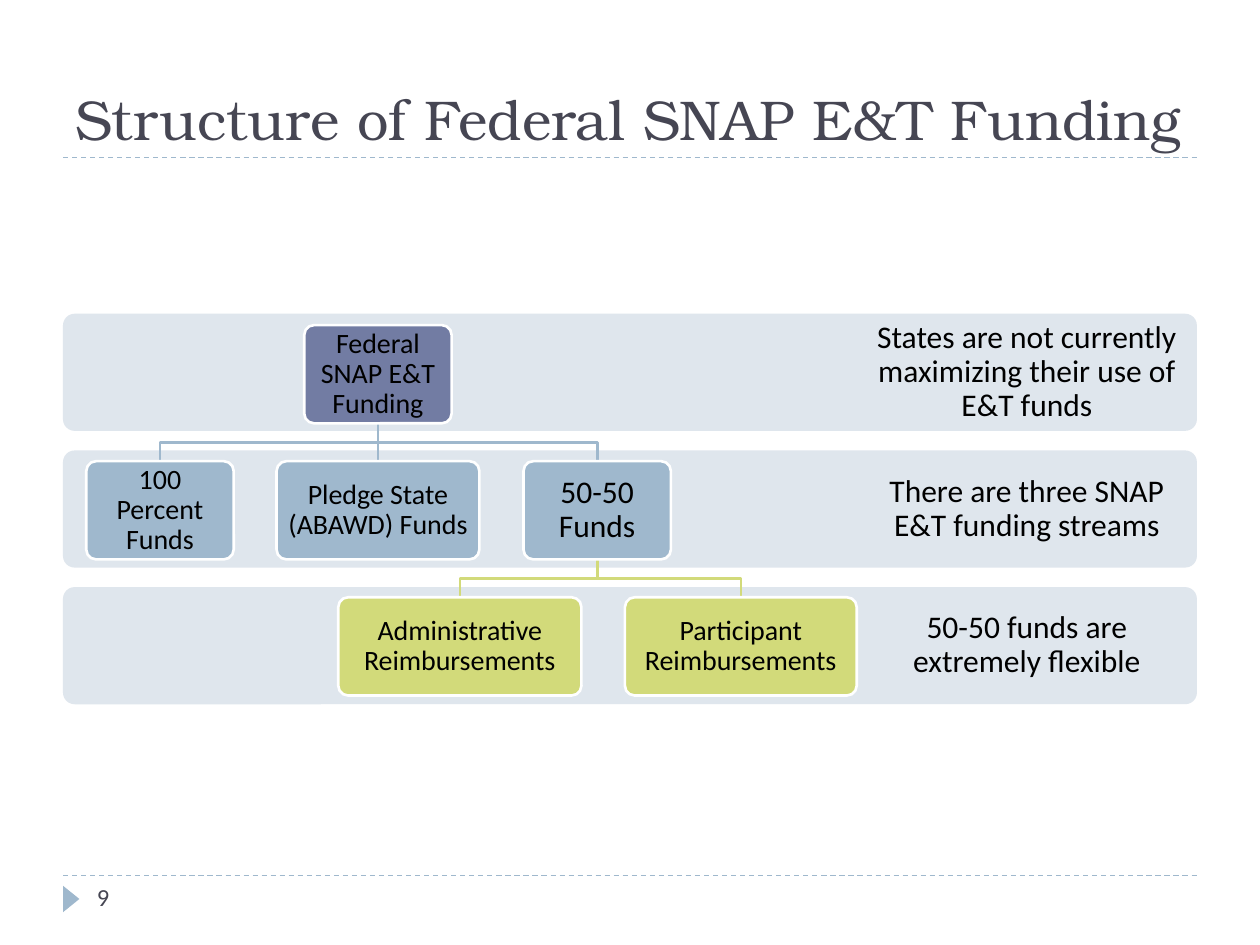
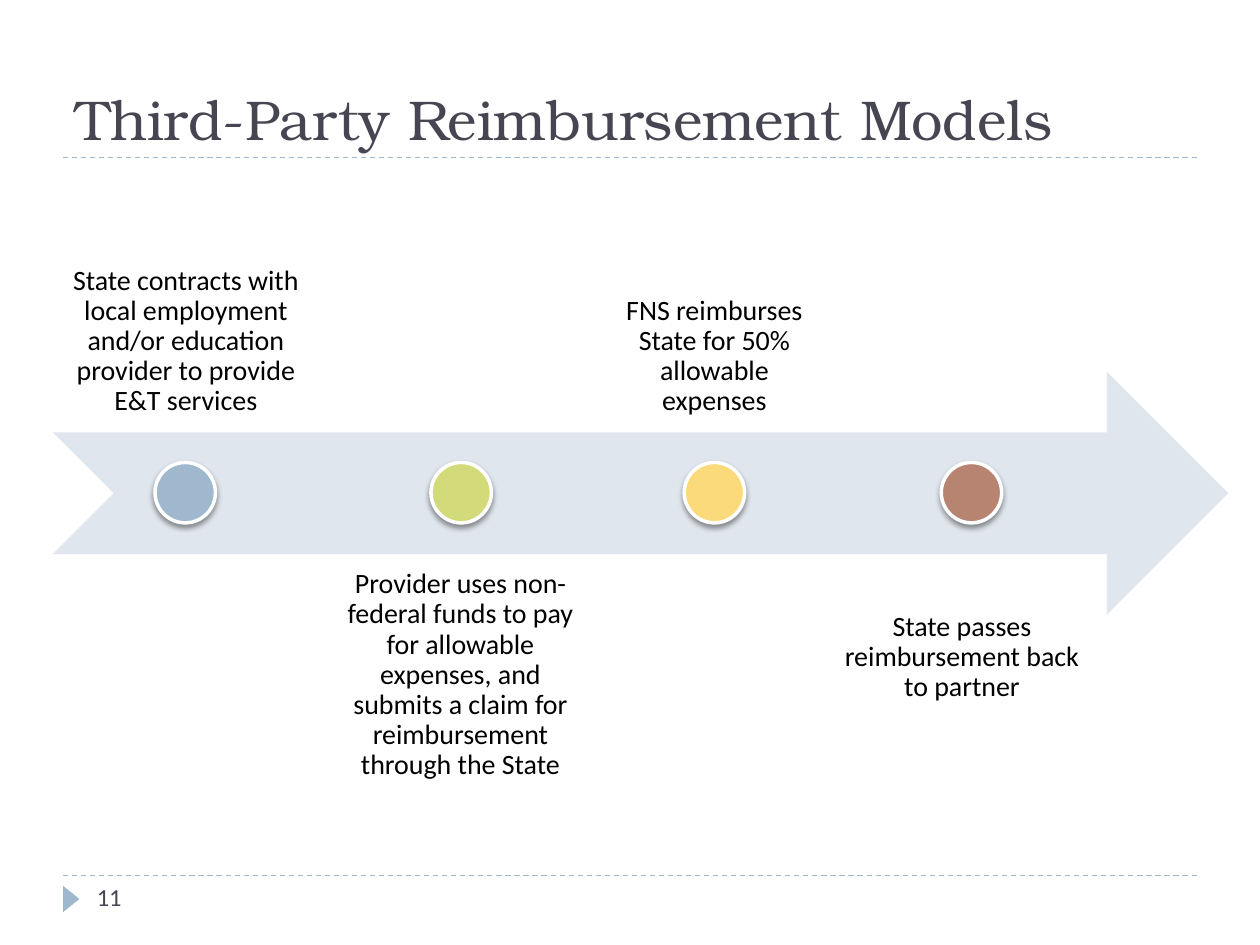
from dataclasses import dataclass

from lxml.etree import SubElement
from pptx import Presentation
from pptx.dml.color import RGBColor
from pptx.enum.dml import MSO_LINE
from pptx.enum.shapes import MSO_CONNECTOR, MSO_SHAPE
from pptx.enum.text import MSO_ANCHOR, PP_ALIGN
from pptx.oxml.ns import qn
from pptx.util import Inches, Pt

BLACK = RGBColor(0x00, 0x00, 0x00)
WHITE = RGBColor(0xFF, 0xFF, 0xFF)
SLATE = RGBColor(0x46, 0x46, 0x53)
PALE = RGBColor(0xDF, 0xE6, 0xED)
BLUE = RGBColor(0x9F, 0xB8, 0xCD)
INDIGO = RGBColor(0x72, 0x7C, 0xA3)
GREEN = RGBColor(0xD2, 0xDA, 0x7A)
YELLOW = RGBColor(0xFA, 0xDA, 0x7A)
BROWN = RGBColor(0xB8, 0x84, 0x72)

TITLE_FONT = "TeX Gyre Bonum"
BODY_FONT = "Calibri"

BAND_TOP, BAND_HEIGHT, BAND_PITCH = 2.49, 0.93, 1.085
NODE_TOP, NODE_HEIGHT, NODE_PITCH = 2.58, 0.78, 1.08
DOT_TOP, DOT_SIZE = 3.67, 0.48


@dataclass(frozen=True)
class Node:
    """A box of the funding tree, with its level and centre."""
    label: str
    level: int
    center: float
    width: float
    fill: RGBColor
    size: int = 16
    parent: "Node | None" = None

    @property
    def top(self) -> float:
        """Return the upper edge."""
        return NODE_TOP + self.level * NODE_PITCH


@dataclass(frozen=True)
class Step:
    """A dot on the arrow with its description."""
    label: str
    dot_left: float
    fill: RGBColor
    left: float
    top: float
    width: float
    anchor: MSO_ANCHOR


FUNDING = Node("Federal SNAP E&T Funding", 0, 3, 1.17, INDIGO)
FIFTY = Node("50-50 Funds", 1, 4.74, 1.17, BLUE, 18, FUNDING)
NODES = [
    FUNDING,
    Node("100 Percent Funds", 1, 1.27, 1.17, BLUE, parent=FUNDING),
    Node("Pledge State (ABAWD) Funds", 1, 3, 1.61, BLUE, parent=FUNDING),
    FIFTY,
    Node("Administrative Reimbursements", 2, 3.65, 1.93, GREEN, parent=FIFTY),
    Node("Participant Reimbursements", 2, 5.88, 1.84, GREEN, parent=FIFTY),
]
BAND_LABELS = [
    "States are not currently maximizing their use of E&T funds",
    "There are three SNAP E&T funding streams",
    "50-50 funds are extremely flexible",
]
STEPS = [
    Step("State contracts with local employment and/or education provider to "
         "provide E&T services", 1.23, BLUE, 0.42, 1.5, 2.11, MSO_ANCHOR.BOTTOM),
    Step("Provider uses non-federal funds to pay for allowable expenses, and "
         "submits a claim for reimbursement through the State",
         3.42, GREEN, 2.57, 4.4, 2.17, MSO_ANCHOR.TOP),
    Step("FNS reimburses State for 50% allowable expenses",
         5.43, YELLOW, 4.79, 1.5, 1.76, MSO_ANCHOR.BOTTOM),
    Step("State passes reimbursement back to partner",
         7.47, BROWN, 6.53, 4.74, 2.21, MSO_ANCHOR.TOP),
]


def write(shape, text: str, size: int, font=BODY_FONT, color=BLACK,
          anchor=MSO_ANCHOR.MIDDLE, align=PP_ALIGN.CENTER, inset=None, spacing=0.9):
    """Put formatted text into a shape."""
    frame = shape.text_frame
    frame.text = text
    frame.word_wrap = True
    frame.vertical_anchor = anchor
    if inset is not None:
        frame.margin_left = frame.margin_right = Inches(inset)
        frame.margin_top = frame.margin_bottom = Inches(inset)
    para = frame.paragraphs[0]
    para.alignment = align
    para.line_spacing = spacing
    para.font.name = font
    for span in para.runs:
        span.font.name = font
        span.font.size = Pt(size)
        span.font.color.rgb = color


def add_text(page, left: float, top: float, width: float, height: float,
             text: str, size: int, **style):
    """Add a text box."""
    box = page.shapes.add_textbox(Inches(left), Inches(top), Inches(width), Inches(height))
    write(box, text, size, **style)


def add_preset(page, kind: MSO_SHAPE, left: float, top: float, width: float,
               height: float, fill: RGBColor, outline: float = 0):
    """Add a filled preset shape with an optional white outline."""
    shape = page.shapes.add_shape(kind, Inches(left), Inches(top), Inches(width), Inches(height))
    shape.shadow.inherit = False
    shape.fill.solid()
    shape.fill.fore_color.rgb = fill
    if outline:
        shape.line.color.rgb = WHITE
        shape.line.width = Pt(outline)
    else:
        shape.line.fill.background()
    if kind == MSO_SHAPE.ROUNDED_RECTANGLE:
        shape.adjustments[0] = 0.1
    return shape


def add_line(page, x1: float, y1: float, x2: float, y2: float,
             color: RGBColor, width: float):
    """Add a straight line without a shadow."""
    line = page.shapes.add_connector(MSO_CONNECTOR.STRAIGHT, Inches(x1), Inches(y1),
                                     Inches(x2), Inches(y2))
    line.line.color.rgb = color
    line.line.width = Pt(width)
    SubElement(line.element.spPr, qn("a:effectLst"))
    return line


def add_branch(page, node: Node):
    """Link a node to its parent by a stepped line."""
    start, end = node.parent.center, node.center
    upper, lower = node.parent.top + NODE_HEIGHT, node.top
    if start == end:
        add_line(page, start, upper, end, lower, node.fill, 1.5)
        return
    middle = (upper + lower) / 2
    builder = page.shapes.build_freeform(Inches(start), Inches(upper))
    corners = [(start, middle), (end, middle), (end, lower)]
    builder.add_line_segments([(Inches(x), Inches(y)) for x, y in corners], close=False)
    branch = builder.convert_to_shape()
    branch.shadow.inherit = False
    branch.fill.background()
    branch.line.color.rgb = node.fill
    branch.line.width = Pt(1.5)


def add_node(page, node: Node):
    """Draw one box of the funding tree."""
    box = add_preset(page, MSO_SHAPE.ROUNDED_RECTANGLE, node.center - node.width / 2,
                     node.top, node.width, NODE_HEIGHT, node.fill, 1.5)
    write(box, node.label, node.size, inset=0.07)


def add_dot_shadow(dot):
    """Give a dot a soft shadow below it."""
    effects = dot.element.spPr.find(qn("a:effectLst"))
    shadow = SubElement(effects, qn("a:outerShdw"), blurRad=str(Pt(3)), dist=str(Pt(2)),
                        dir="5400000", rotWithShape="0")
    color = SubElement(shadow, qn("a:srgbClr"), val=str(BLACK))
    SubElement(color, qn("a:alpha"), val="40000")


def add_step(page, step: Step):
    """Draw a dot and its description."""
    add_text(page, step.left, step.top, step.width, 1.93, step.label, 16,
             anchor=step.anchor, inset=0.12)
    dot = add_preset(page, MSO_SHAPE.OVAL, step.dot_left, DOT_TOP,
                     DOT_SIZE, DOT_SIZE, step.fill, 2)
    add_dot_shadow(dot)


def add_page(deck, title: str, number: int):
    """Add a slide with the shared rules, title and number."""
    page = deck.slides.add_slide(deck.slide_layouts[6])
    for y in (6.95, 1.25):
        add_line(page, 0.5, y, 9.5, y, BLUE, 0.75).line.dash_style = MSO_LINE.DASH
    marker = add_preset(page, MSO_SHAPE.ISOSCELES_TRIANGLE, 0.46, 7.07, 0.21, 0.13, BLUE)
    marker.rotation = 90
    add_text(page, 0.5, 0.17, 9, 1.08, title, 32, font=TITLE_FONT, color=SLATE,
             anchor=MSO_ANCHOR.BOTTOM, align=PP_ALIGN.LEFT, spacing=1.0)
    add_text(page, 0.67, 6.95, 2.17, 0.4, str(number), 14, color=SLATE,
             anchor=MSO_ANCHOR.TOP, align=PP_ALIGN.LEFT, spacing=1.0)
    return page


def build_funding(deck):
    """Build the funding structure slide."""
    page = add_page(deck, "Structure of Federal SNAP E&T Funding", 9)
    for level, label in enumerate(BAND_LABELS):
        top = BAND_TOP + level * BAND_PITCH
        add_preset(page, MSO_SHAPE.ROUNDED_RECTANGLE, 0.5, top, 9, BAND_HEIGHT, PALE)
        add_text(page, 6.8, top, 2.7, BAND_HEIGHT, label, 18, inset=0.14)
    for node in NODES:
        if node.parent:
            add_branch(page, node)
    for node in NODES:
        add_node(page, node)


def build_reimbursement(deck):
    """Build the reimbursement models slide."""
    page = add_page(deck, "Third-Party Reimbursement Models", 11)
    add_preset(page, MSO_SHAPE.NOTCHED_RIGHT_ARROW, 0.42, 2.95, 9.33, 1.93, PALE)
    for step in STEPS:
        add_step(page, step)


def main():
    """Build and save the deck."""
    deck = Presentation()
    deck.slide_width, deck.slide_height = Inches(10), Inches(7.5)
    build_funding(deck)
    build_reimbursement(deck)
    deck.save("out.pptx")


if __name__ == "__main__":
    main()
